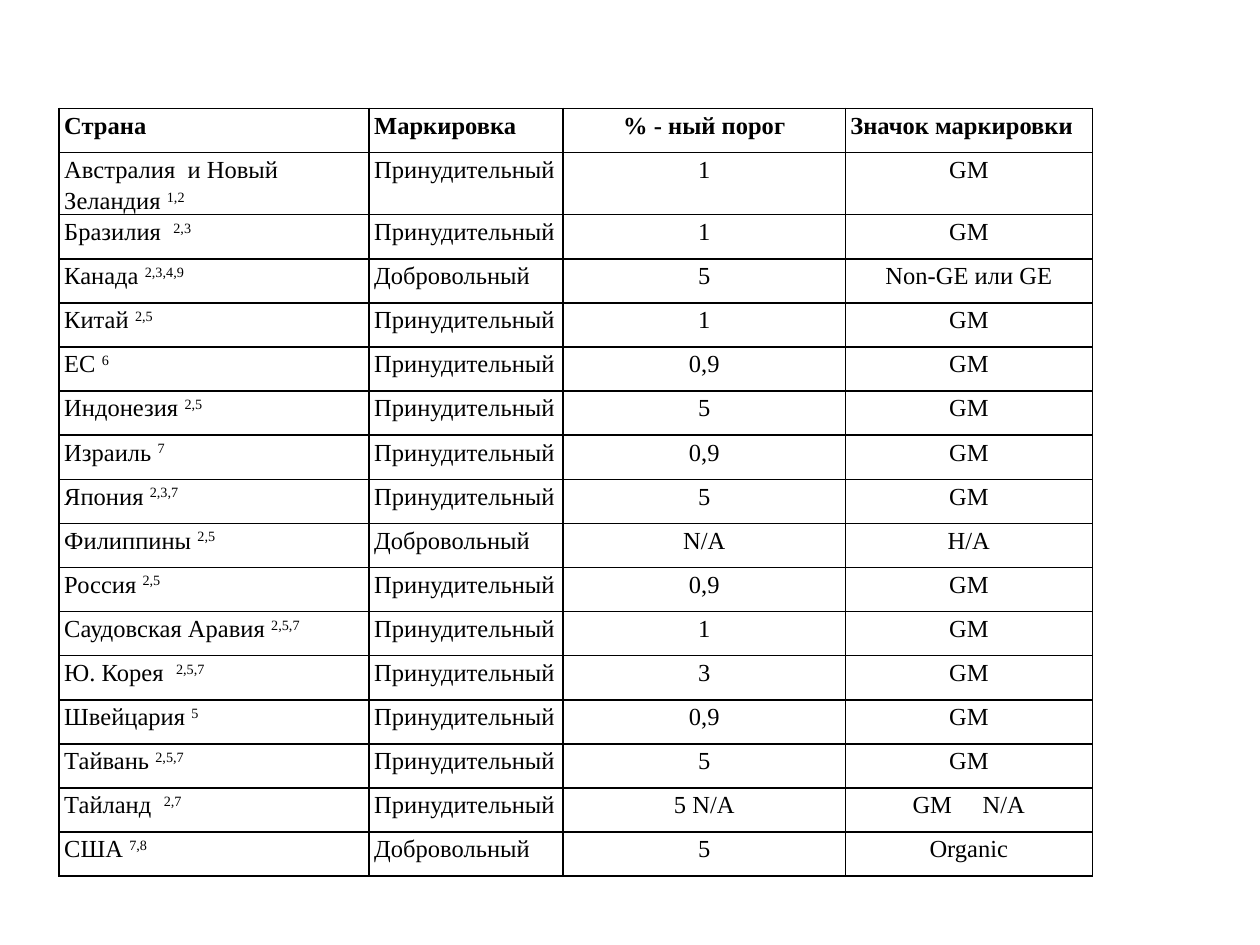
from lxml import etree
from pptx import Presentation
from pptx.dml.color import RGBColor
from pptx.enum.text import PP_ALIGN as Align
from pptx.oxml.ns import qn
from pptx.util import Inches, Pt

BLACK = "000000"
FONT = "Times New Roman"
COL_WIDTHS = [2.46, 1.54, 2.24, 1.96]
ROW_HEIGHT = 0.35
FORCED, FREE = "Принудительный", "Добровольный"

HEADERS = ["Страна", "Маркировка", "% - ный порог", "Значок маркировки"]
# Country, footnote numbers, labelling, threshold, label mark
COUNTRIES = [
    ("Австралия  и Новый Зеландия ", "1,2", FORCED, "1", "GM"),
    ("Бразилия  ", "2,3", FORCED, "1", "GM"),
    ("Канада ", "2,3,4,9", FREE, "5", "Non-GE или GE"),
    ("Китай ", "2,5", FORCED, "1", "GM"),
    ("ЕС ", "6", FORCED, "0,9", "GM"),
    ("Индонезия ", "2,5", FORCED, "5", "GM"),
    ("Израиль ", "7", FORCED, "0,9", "GM"),
    ("Япония ", "2,3,7", FORCED, "5", "GM"),
    ("Филиппины ", "2,5", FREE, "N/А", "Н/А"),
    ("Россия ", "2,5", FORCED, "0,9", "GM"),
    ("Саудовская Аравия ", "2,5,7", FORCED, "1", "GM"),
    ("Ю. Корея  ", "2,5,7", FORCED, "3", "GM"),
    ("Швейцария ", "5", FORCED, "0,9", "GM"),
    ("Тайвань ", "2,5,7", FORCED, "5", "GM"),
    ("Тайланд  ", "2,7", FORCED, "5 N/А", "GM     N/А"),
    ("США ", "7,8", FREE, "5", "Organic"),
]


def color(hex_string):
    return RGBColor.from_string(hex_string)


def set_borders(cell, hex_string, width):
    tc_pr = cell._tc.get_or_add_tcPr()
    for i, side in enumerate(("lnL", "lnR", "lnT", "lnB")):
        ln = etree.Element(qn(f"a:{side}"), w=str(Pt(width)))
        fill = etree.SubElement(ln, qn("a:solidFill"))
        etree.SubElement(fill, qn("a:srgbClr"), val=hex_string)
        tc_pr.insert(i, ln)


def fill_cell(cell, text, note="", bold=False, centered=False):
    """Write text, with an optional superscript note, in a bordered cell."""
    cell.margin_left = cell.margin_right = Inches(0.04)
    cell.margin_top = cell.margin_bottom = 0
    cell.fill.background()
    set_borders(cell, BLACK, 1)

    p = cell.text_frame.paragraphs[0]
    p.alignment = Align.CENTER if centered else Align.LEFT
    p.line_spacing = 1.15
    p.add_run().text = text
    if note:
        r = p.add_run()
        r.text = note
        r.font._element.set("baseline", "30000")
    for r in p.runs:
        r.font.name, r.font.size, r.font.bold = FONT, Pt(14), bold
        r.font.color.rgb = color(BLACK)


def add_labelling_table(slide, left, top):
    row_count = len(COUNTRIES) + 1
    table = slide.shapes.add_table(
        row_count, len(HEADERS), Inches(left), Inches(top),
        Inches(sum(COL_WIDTHS)), Inches(ROW_HEIGHT * row_count)).table
    table.first_row = table.horz_banding = False
    for column, width in zip(table.columns, COL_WIDTHS):
        column.width = Inches(width)
    for row in table.rows:
        row.height = Inches(ROW_HEIGHT)

    for c, header in enumerate(HEADERS):
        fill_cell(table.cell(0, c), header, bold=True, centered=c == 2)
    for i, (country, note, *values) in enumerate(COUNTRIES, 1):
        fill_cell(table.cell(i, 0), country, note)
        for c, value in enumerate(values, 1):
            fill_cell(table.cell(i, c), value, centered=c >= 2)


def main():
    prs = Presentation()
    prs.slide_width, prs.slide_height = Inches(10), Inches(7.5)
    slide = prs.slides.add_slide(prs.slide_layouts[6])
    add_labelling_table(slide, 0.47, 0.86)
    prs.save("out.pptx")


if __name__ == "__main__":
    main()
